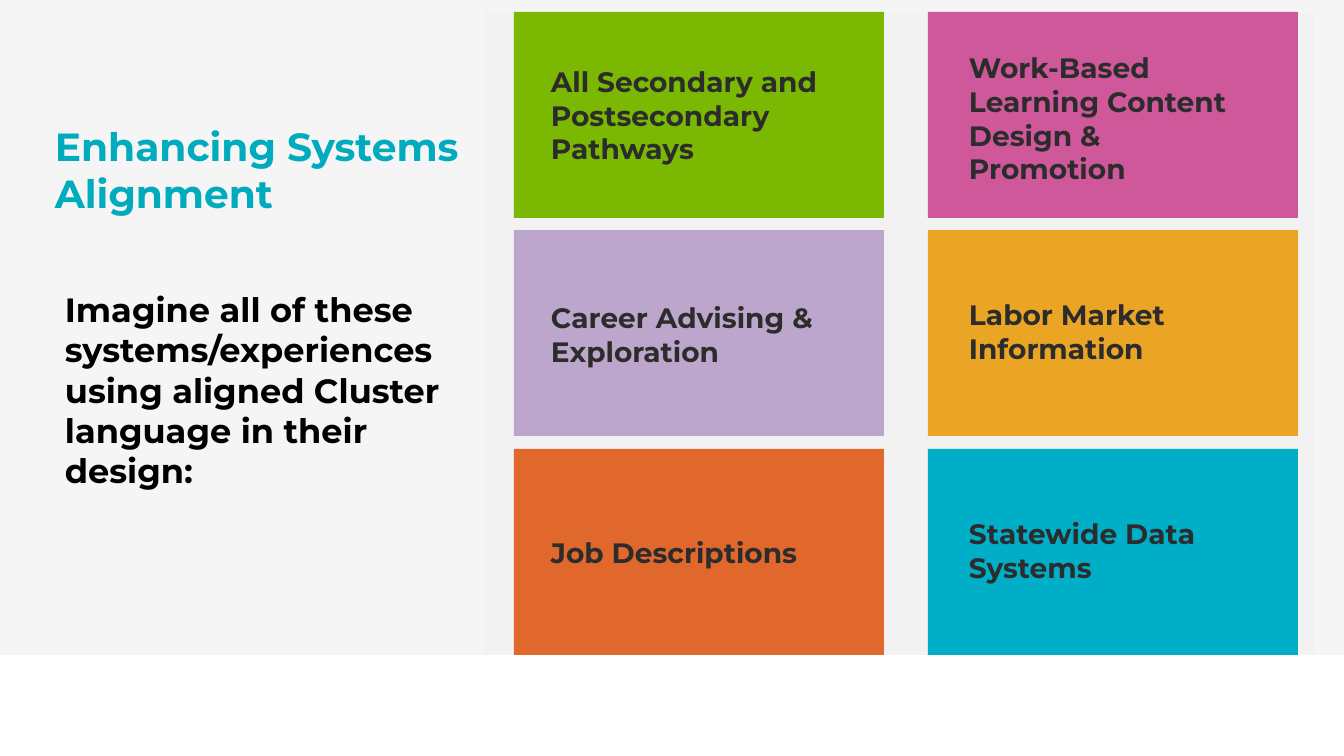
from pptx import Presentation
from pptx.dml.color import RGBColor
from pptx.enum.shapes import MSO_SHAPE
from pptx.enum.text import MSO_ANCHOR, PP_ALIGN
from pptx.util import Pt

RECTANGLE = MSO_SHAPE.RECTANGLE
TOP, MIDDLE = MSO_ANCHOR.TOP, MSO_ANCHOR.MIDDLE
LEFT = PP_ALIGN.LEFT
FONT = "Montserrat"
EMU_PER_PX = 914400 / 100.8
COLORS = {
    "backdrop": "F5F5F5", "panel": "F2F2F2", "white": "FFFFFF",
    "title": "00ABBD", "body": "000000", "label": "2C2C2D",
    "green": "7BB801", "lilac": "BDA6CB", "orange": "E0682C",
    "pink": "CF589A", "amber": "EBA525", "cyan": "00AEC7",
}


def add_block(left, top, width, height, color):
    place = [round(value * EMU_PER_PX) for value in (left, top, width, height)]
    block = page.shapes.add_shape(RECTANGLE, *place)
    block.shadow.inherit = False
    block.fill.solid()
    block.fill.fore_color.rgb = RGBColor.from_string(COLORS[color])
    block.line.fill.background()


def add_text(left, top, width, height, text, size, color, anchor=MIDDLE, margins=(10, 5, 10, 5)):
    place = [round(value * EMU_PER_PX) for value in (left, top, width, height)]
    frame = page.shapes.add_textbox(*place).text_frame
    frame.word_wrap = True
    frame.vertical_anchor = anchor
    (frame.margin_left, frame.margin_top, frame.margin_right,
     frame.margin_bottom) = [round(value * EMU_PER_PX) for value in margins]
    frame.text = text
    para = frame.paragraphs[0]
    para.alignment = LEFT
    font = para.runs[0].font
    font.name, font.size, font.bold = FONT, Pt(size), True
    font.color.rgb = RGBColor.from_string(COLORS[color])


deck = Presentation()
deck.slide_width = round(1344 * EMU_PER_PX)
deck.slide_height = round(756 * EMU_PER_PX)
page = deck.slides.add_slide(deck.slide_layouts[6])

# Backdrop, title and introduction
add_block(0, 0, 1344, 668, "backdrop")
add_text(55, 72, 404, 185, "Enhancing Systems Alignment", 28, "title", margins=(0, 10, 0, 0))
add_text(55, 284, 404, 355,
         "Imagine all of these systems/experiences using aligned Cluster language in their design:",
         24, "body", anchor=TOP)

# Panel behind the cards and white footer band
add_block(484, 12, 830, 643, "panel")
add_block(0, 655, 1344, 101, "white")

# Cards by column: card left, label left, then color, label top, label height, label
columns = [
    (514, 541, [
        ("green", 52, 126, "All Secondary and Postsecondary Pathways"),
        ("lilac", 271, 126, "Career Advising & Exploration"),
        ("orange", 489, 126, "Job Descriptions"),
    ]),
    (928, 959, [
        ("pink", 45, 146, "Work-Based Learning Content Design & Promotion"),
        ("amber", 268, 126, "Labor Market Information"),
        ("cyan", 487, 126, "Statewide Data Systems"),
    ]),
]
for card_left, label_left, cards in columns:
    for row, (color, label_top, label_height, label) in enumerate(cards):
        add_block(card_left, 12 + row * 437 // 2, 370, 206, color)
        add_text(label_left, label_top, 289, label_height, label, 20, "label")

deck.save("out.pptx")
